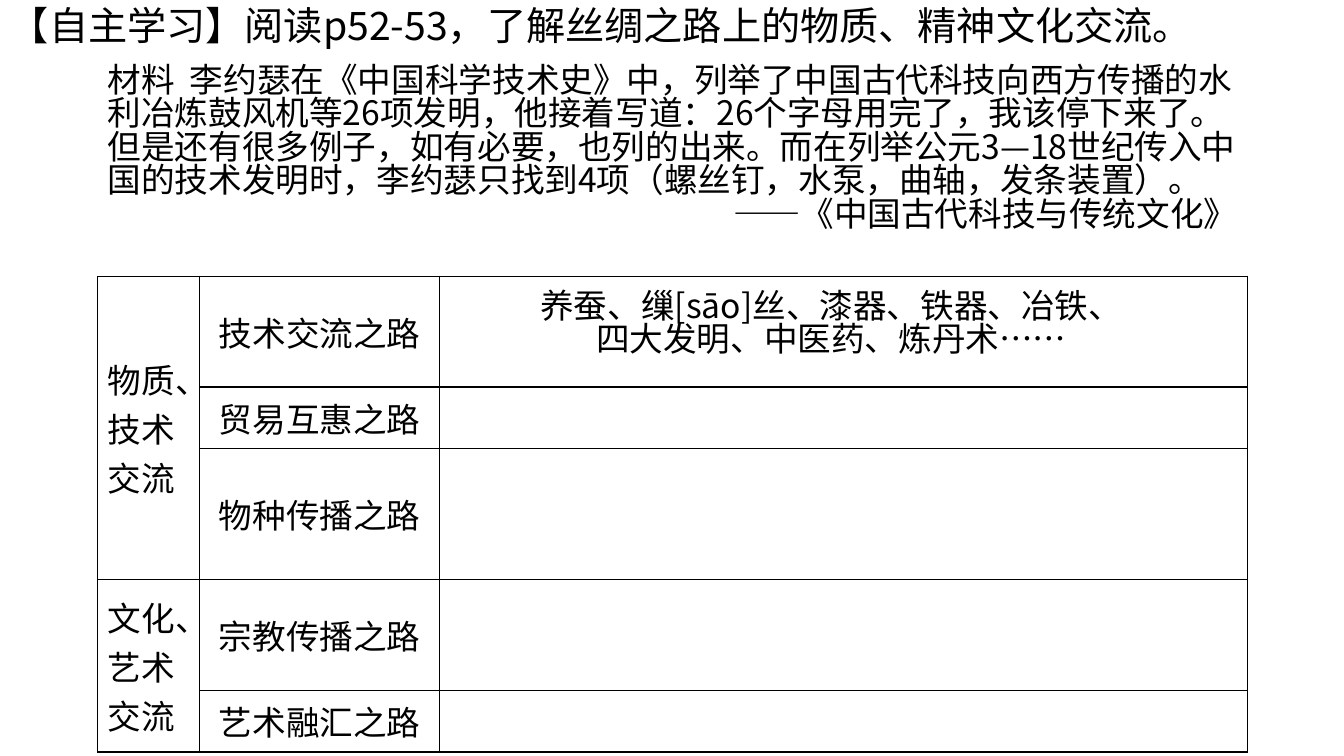
"""Build a Silk Road self-study slide with a source passage and an exchange table."""
from lxml import etree
from pptx import Presentation
from pptx.dml.color import RGBColor
from pptx.enum.shapes import MSO_SHAPE
from pptx.enum.text import MSO_ANCHOR, PP_ALIGN
from pptx.oxml.ns import qn
from pptx.util import Inches, Pt

LEFT, CENTER, RIGHT = PP_ALIGN.LEFT, PP_ALIGN.CENTER, PP_ALIGN.RIGHT
MIDDLE = MSO_ANCHOR.MIDDLE
RECTANGLE = MSO_SHAPE.RECTANGLE
FONT = "Noto Sans CJK SC"
COLORS = {"ink": "000000", "paper": "FFFFFF"}
TIGHT = 0.83


def write(frame, lines, size=24, spacing=None):
    """Fill a text frame with (text, alignment) paragraphs."""
    for index, (text, alignment) in enumerate(lines):
        para = frame.add_paragraph() if index else frame.paragraphs[0]
        para.alignment = alignment
        if spacing:
            para.line_spacing = spacing
        span = para.add_run()
        span.text = text
        span.font.size = Pt(size)
        span.font.name = FONT
        span.font.color.rgb = RGBColor.from_string(COLORS["ink"])
        properties = span.font._element
        properties.set("lang", "zh-CN")
        etree.SubElement(properties, qn("a:ea")).set("typeface", FONT)


def outline(cell):
    """Draw a one-point border on every side of a cell."""
    properties = cell._tc.get_or_add_tcPr()
    for index, side in enumerate(("lnL", "lnR", "lnT", "lnB")):
        line = etree.Element(qn(f"a:{side}"), w=str(Pt(1)))
        fill = etree.SubElement(line, qn("a:solidFill"))
        etree.SubElement(fill, qn("a:srgbClr")).set("val", COLORS["ink"])
        properties.insert(index, line)


deck = Presentation()
deck.slide_width, deck.slide_height = Inches(13.33), Inches(7.5)
page = deck.slides.add_slide(deck.slide_layouts[6])

passage = page.shapes.add_textbox(Inches(0.97), Inches(0.6), Inches(11.4), Inches(2.12))
passage.text_frame.word_wrap = True
write(passage.text_frame, [
    ("材料  李约瑟在《中国科学技术史》中，列举了中国古代科技向西方传播的水利冶炼鼓风机等26项发明，"
     "他接着写道：26个字母用完了，我该停下来了。但是还有很多例子，如有必要，也列的出来。"
     "而在列举公元3—18世纪传入中国的技术发明时，李约瑟只找到4项（螺丝钉，水泵，曲轴，发条装置）。", LEFT),
    ("——《中国古代科技与传统文化》", RIGHT),
], spacing=TIGHT)

column_widths = [1.01, 2.38, 8.01]
row_heights = [1.1, 0.61, 1.3, 1.1, 0.61]
groups = [
    ("物质、技术交流", ["技术交流之路", "贸易互惠之路", "物种传播之路"]),
    ("文化、艺术交流", ["宗教传播之路", "艺术融汇之路"]),
]
table = page.shapes.add_table(
    len(row_heights), len(column_widths), Inches(0.97), Inches(2.74),
    Inches(sum(column_widths)), Inches(sum(row_heights))).table
table.first_row = table.horz_banding = False
for column, width in zip(table.columns, column_widths):
    column.width = Inches(width)
for row, height in zip(table.rows, row_heights):
    row.height = Inches(height)
for cell in table.iter_cells():
    cell.fill.background()
    cell.vertical_anchor = MIDDLE
    outline(cell)

top = 0
for theme, roads in groups:
    table.cell(top, 0).merge(table.cell(top + len(roads) - 1, 0))
    write(table.cell(top, 0).text_frame, [(theme, LEFT)])
    for offset, road in enumerate(roads):
        write(table.cell(top + offset, 1).text_frame, [(road, CENTER)])
    top += len(roads)

heading = page.shapes.add_shape(RECTANGLE, 0, 0, Inches(12.05), Inches(0.57))
heading.shadow.inherit = False
heading.fill.solid()
heading.fill.fore_color.rgb = RGBColor.from_string(COLORS["paper"])
heading.line.fill.background()
heading.text_frame.word_wrap = False
heading.text_frame.vertical_anchor = MIDDLE
write(heading.text_frame, [("【自主学习】阅读p52-53，了解丝绸之路上的物质、精神文化交流。", LEFT)],
      size=28, spacing=TIGHT)

answer = page.shapes.add_textbox(Inches(4.88), Inches(2.84), Inches(6.73), Inches(0.91))
answer.text_frame.word_wrap = True
write(answer.text_frame, [
    ("养蚕、缫[sāo]丝、漆器、铁器、冶铁、", CENTER),
    ("四大发明、中医药、炼丹术……", CENTER),
], spacing=TIGHT)

deck.save("out.pptx")
